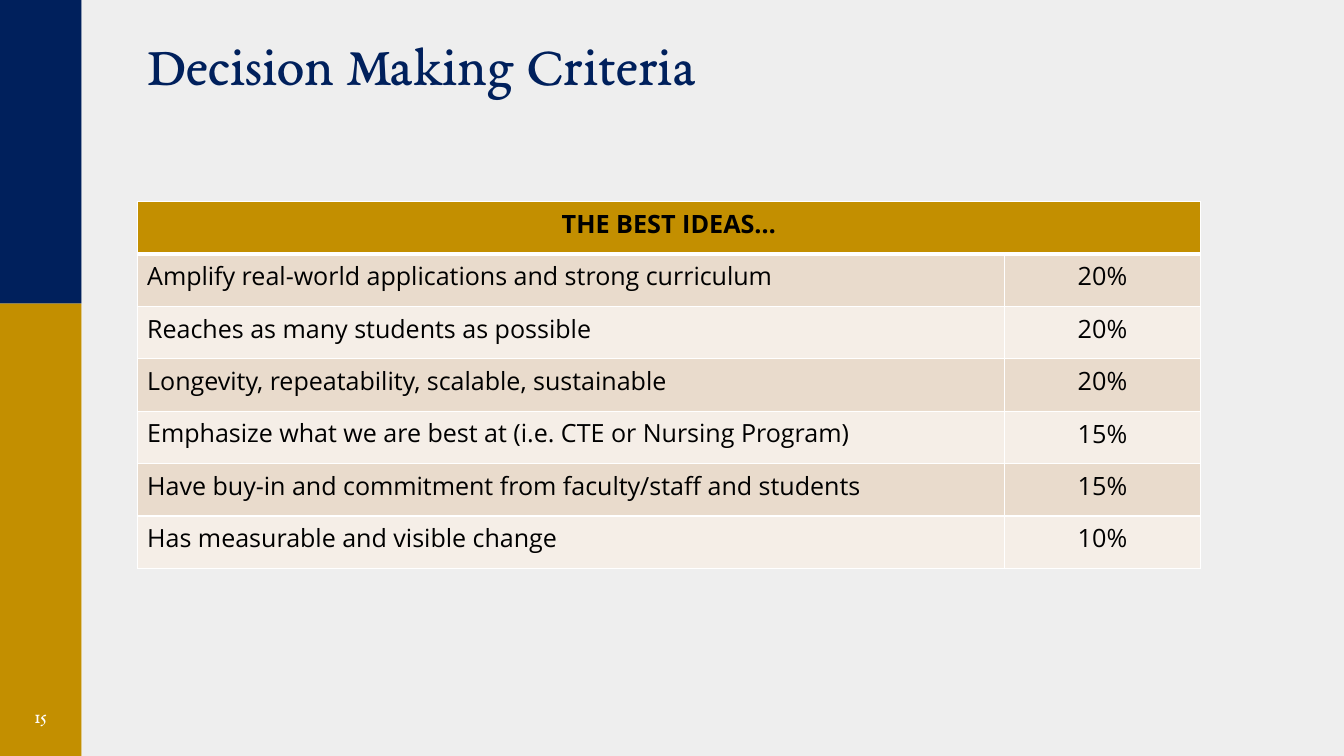
from dataclasses import dataclass

from lxml.etree import SubElement
from pptx import Presentation
from pptx.dml.color import RGBColor
from pptx.enum.shapes import MSO_SHAPE
from pptx.enum.text import MSO_ANCHOR, PP_ALIGN
from pptx.oxml.ns import qn
from pptx.util import Inches, Pt


@dataclass(frozen=True)
class Theme:
    navy: str = "00205C"
    gold: str = "C38F00"
    paper: str = "EEEEEE"
    white: str = "FFFFFF"
    black: str = "000000"
    bands: tuple[str, str] = ("E9DBCC", "F5EEE7")
    serif: str = "EB Garamond"
    sans: str = "Open Sans"
    title_size: float = 39.6
    table_size: float = 18
    item_size: float = 17.9
    number_size: float = 14
    rule: float = 1
    heavy_rule: float = 3


@dataclass(frozen=True)
class Box:
    left: float
    top: float
    width: float
    height: float

    def emu(self) -> list:
        return [Inches(v) for v in (self.left, self.top, self.width, self.height)]


@dataclass(frozen=True)
class Panel:
    box: Box
    color: str


@dataclass(frozen=True)
class Criterion:
    idea: str
    weight: str


T = Theme()
SLIDE_W, SLIDE_H = 13.33, 7.5
BAR_W, NAVY_H = 0.81, 3.01
ROW_H, COL_WIDTHS = 0.52, (8.6, 1.95)

PANELS = [
    Panel(Box(0, NAVY_H, BAR_W, SLIDE_H - NAVY_H), T.gold),
    Panel(Box(0, 0, BAR_W, NAVY_H), T.navy),
    Panel(Box(BAR_W, 0, SLIDE_W - BAR_W, SLIDE_H), T.paper),
]
CRITERIA = [
    Criterion("Amplify real-world applications and strong curriculum", "20%"),
    Criterion("Reaches as many students as possible", "20%"),
    Criterion("Longevity, repeatability, scalable, sustainable", "20%"),
    Criterion("Emphasize what we are best at (i.e. CTE or Nursing Program)", "15%"),
    Criterion("Have buy-in and commitment from faculty/staff and students", "15%"),
    Criterion("Has measurable and visible change", "10%"),
]


def write(tf, text: str, color: str, align=PP_ALIGN.LEFT, spacing: float = 1.0, **font) -> None:
    p = tf.paragraphs[0]
    p.alignment, p.line_spacing = align, spacing
    r = p.add_run()
    r.text = text
    r.font.color.rgb = RGBColor.from_string(color)
    for name, value in font.items():
        setattr(r.font, name, value)


def add_panel(slide, panel: Panel) -> None:
    sp = slide.shapes.add_shape(MSO_SHAPE.RECTANGLE, *panel.box.emu())
    sp.shadow.inherit = False
    sp.fill.solid()
    sp.fill.fore_color.rgb = RGBColor.from_string(panel.color)
    sp.line.fill.background()


def add_text(slide, box: Box, text: str, color: str, anchor, **style) -> None:
    tf = slide.shapes.add_textbox(*box.emu()).text_frame
    tf.word_wrap = True
    tf.vertical_anchor = anchor
    write(tf, text, color, **style)


def style_cell(cell, fill: str, top: float = T.rule, bottom: float = T.rule) -> None:
    tc_pr = cell._tc.get_or_add_tcPr()
    widths = {"a:lnL": T.rule, "a:lnR": T.rule, "a:lnT": top, "a:lnB": bottom}
    for tag, width in widths.items():
        ln = SubElement(tc_pr, qn(tag), w=str(Pt(width)))
        SubElement(SubElement(ln, qn("a:solidFill")), qn("a:srgbClr"), val=T.white)
    cell.fill.solid()
    cell.fill.fore_color.rgb = RGBColor.from_string(fill)


def add_criteria_table(slide, left: float, top: float) -> None:
    rows = len(CRITERIA) + 1
    box = Box(left, top, sum(COL_WIDTHS), rows * ROW_H)
    table = slide.shapes.add_table(rows, len(COL_WIDTHS), *box.emu()).table
    for col, width in zip(table.columns, COL_WIDTHS):
        col.width = Inches(width)
    for row in table.rows:
        row.height = Inches(ROW_H)

    # Header across both columns
    for cell in table.rows[0].cells:
        style_cell(cell, T.gold, bottom=T.heavy_rule)
    header = table.cell(0, 0)
    header.merge(table.cell(0, 1))
    write(header.text_frame, "THE BEST IDEAS…", T.black, PP_ALIGN.CENTER,
          name=T.sans, size=Pt(T.table_size), bold=True)

    # Banded criteria rows
    for i, item in enumerate(CRITERIA):
        idea, weight = table.rows[i + 1].cells
        for cell in (idea, weight):
            style_cell(cell, T.bands[i % 2], top=T.rule if i else T.heavy_rule)
        write(idea.text_frame, item.idea, T.black,
              name=T.sans, size=Pt(T.item_size), bold=False)
        write(weight.text_frame, item.weight, T.black, PP_ALIGN.CENTER,
              name=T.sans, size=Pt(T.table_size), bold=False)


def main() -> None:
    prs = Presentation()
    prs.slide_width, prs.slide_height = Inches(SLIDE_W), Inches(SLIDE_H)
    s = prs.slides.add_slide(prs.slide_layouts[6])

    # Side bars and page ground
    for panel in PANELS:
        add_panel(s, panel)

    # Title and page number
    add_text(s, Box(1.36, 0.4, 11.05, 0.62), "Decision Making Criteria", T.navy,
             MSO_ANCHOR.BOTTOM, spacing=0.9, name=T.serif, size=Pt(T.title_size))
    add_text(s, Box(0.15, 6.9, 0.51, 0.4), "15", T.white, MSO_ANCHOR.MIDDLE,
             align=PP_ALIGN.CENTER, name=T.serif, size=Pt(T.number_size))

    # Weighted criteria
    add_criteria_table(s, 1.36, 2)
    prs.save("out.pptx")


if __name__ == "__main__":
    main()
